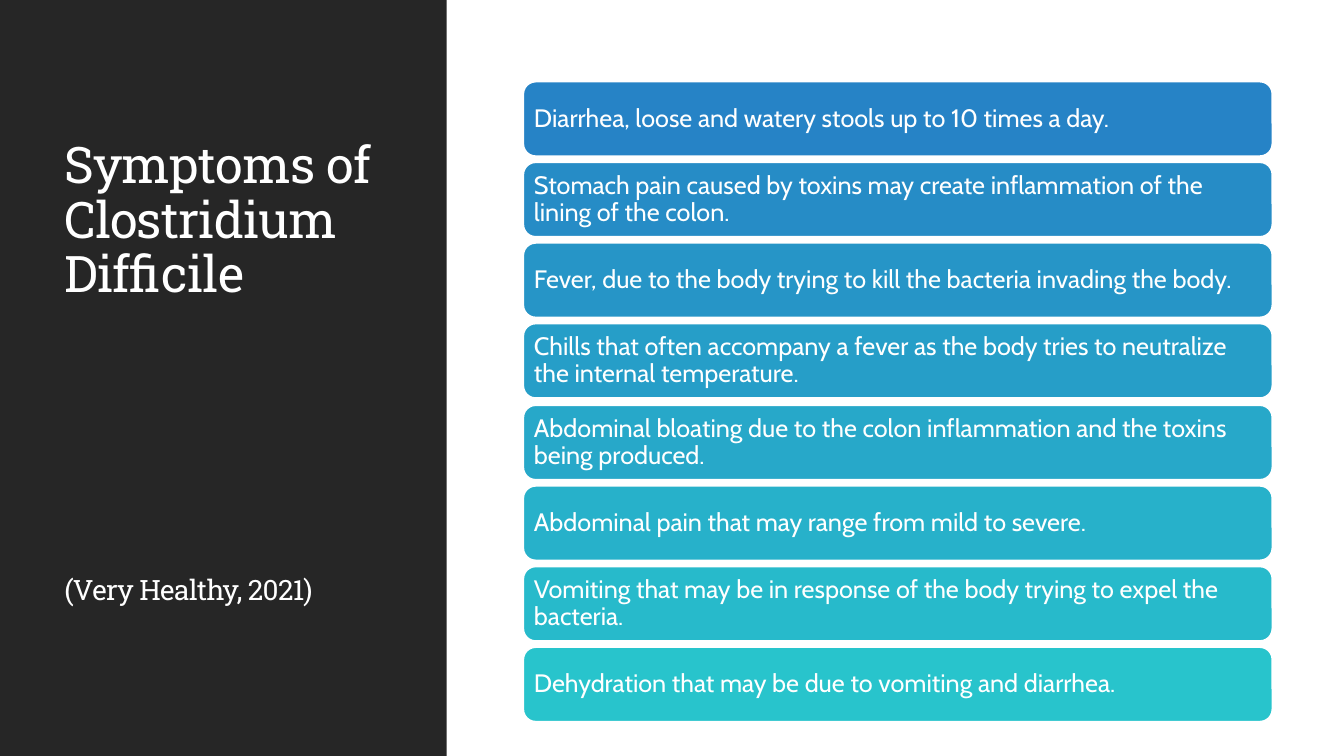
import pptx
import pptx.util
from pptx.dml.color import RGBColor
from pptx.enum.shapes import MSO_SHAPE
from pptx.enum.text import MSO_ANCHOR, PP_ALIGN

PX = 9144  # 100 px to the inch
PAGE_WIDTH, PAGE_HEIGHT = 1333, 750
WHITE = RGBColor(0xFF, 0xFF, 0xFF)
CHARCOAL = RGBColor(0x26, 0x26, 0x26)
FIRST_BLUE = RGBColor(0x26, 0x83, 0xC6)
LAST_TEAL = RGBColor(0x28, 0xC4, 0xCC)
HEADING_FONT, BODY_FONT = "Roboto Slab", "Cabin"

SYMPTOMS = [
    "Diarrhea, loose and watery stools up to 10 times a day.",
    "Stomach pain caused by toxins may create inflammation of the lining of the colon.",
    "Fever, due to the body trying to kill the bacteria invading the body.",
    "Chills that often accompany a fever as the body tries to neutralize the internal temperature.",
    "Abdominal bloating due to the colon inflammation and the toxins being produced.",
    "Abdominal pain that may range from mild to severe.",
    "Vomiting that may be in response of the body trying to expel the bacteria.",
    "Dehydration that may be due to vomiting and diarrhea.",
]


def emu(*lengths):
    return [pptx.util.Emu(length * PX) for length in lengths]


def add_block(page, kind, box, color):
    block = page.shapes.add_shape(kind, *emu(*box))
    block.shadow.inherit = False
    block.fill.solid()
    block.fill.fore_color.rgb = color
    block.line.fill.background()
    return block


def write(shape, text, font, size, anchor, margins, tracking=0):
    """Fill the shape with one left-aligned paragraph; margins are (sides, top and bottom)."""
    frame = shape.text_frame
    frame.word_wrap = True
    frame.vertical_anchor = anchor
    frame.margin_left = frame.margin_right = emu(margins[0])[0]
    frame.margin_top = frame.margin_bottom = emu(margins[1])[0]
    para = frame.paragraphs[0]
    para.alignment = PP_ALIGN.LEFT
    para.line_spacing = 0.9
    span = para.add_run()
    span.text = text
    span.font.name = font
    span.font.size = pptx.util.Pt(size)
    span.font.color.rgb = WHITE
    if tracking:
        span.font._element.set("spc", str(tracking))


def blend(start, end, step, steps):
    return RGBColor(*(a + (b - a) * step // steps for a, b in zip(start, end)))


def add_title_panel(page, box):
    left, top, width, height = box
    add_block(page, MSO_SHAPE.RECTANGLE, box, CHARCOAL)
    lines = [
        ("Symptoms of Clostridium Difficile", 36, 139, 180),
        ("(Very Healthy, 2021)", 20, 572, 40),
    ]
    for text, size, offset, line_height in lines:
        area = page.shapes.add_textbox(*emu(left + 54, top + offset, width - 106, line_height))
        write(area, text, HEADING_FONT, size, MSO_ANCHOR.TOP, (10, 0), tracking=-50)


def add_symptom_list(page, box, gap):
    left, top, width, height = box
    last = len(SYMPTOMS) - 1
    bar_height = (height - gap * last) // len(SYMPTOMS)
    for index, symptom in enumerate(SYMPTOMS):
        bar_top = top + round((height - bar_height) * index / last)
        bar = add_block(page, MSO_SHAPE.ROUNDED_RECTANGLE, (left, bar_top, width, bar_height),
                        blend(FIRST_BLUE, LAST_TEAL, index, last))
        bar.line.color.rgb = WHITE
        bar.line.width = pptx.util.Pt(1.25)
        write(bar, symptom, BODY_FONT, 18, MSO_ANCHOR.MIDDLE, (7, 7))


def main():
    deck = pptx.Presentation()
    deck.slide_width, deck.slide_height = emu(PAGE_WIDTH, PAGE_HEIGHT)
    page = deck.slides.add_slide(deck.slide_layouts[6])
    page.background.fill.solid()
    page.background.fill.fore_color.rgb = WHITE
    add_title_panel(page, (0, 0, 443, PAGE_HEIGHT))
    add_symptom_list(page, (519, 81, 743, 635), gap=6)
    deck.save("out.pptx")


if __name__ == "__main__":
    main()
